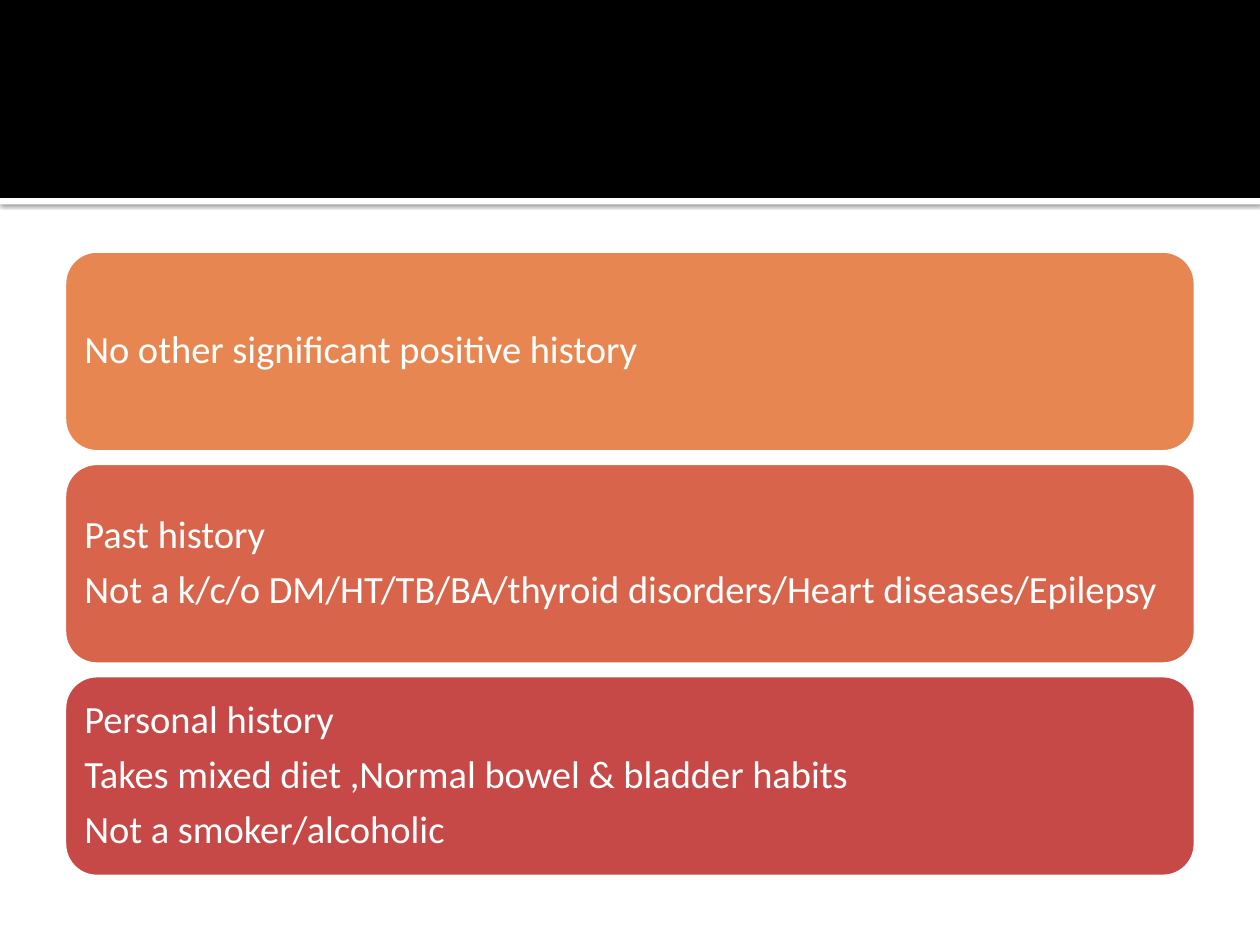
from lxml import etree
from pptx import Presentation
from pptx.dml.color import RGBColor
from pptx.enum.shapes import MSO_SHAPE
from pptx.enum.text import MSO_ANCHOR, PP_ALIGN
from pptx.oxml.ns import qn
from pptx.util import Cm, Pt

RECTANGLE = MSO_SHAPE.RECTANGLE
ROUNDED = MSO_SHAPE.ROUNDED_RECTANGLE
MIDDLE = MSO_ANCHOR.MIDDLE
LEFT = PP_ALIGN.LEFT

COLOURS = {
    "black": "000000",
    "white": "FFFFFF",
    "orange": "E88651",
    "coral": "D8644B",
    "red": "C64847",
}
PANELS = [
    ("orange", ["No other significant positive history"]),
    ("coral", [
        "Past history",
        "Not a k/c/o DM/HT/TB/BA/thyroid disorders/Heart diseases/Epilepsy",
    ]),
    ("red", [
        "Personal history",
        "Takes mixed diet ,Normal bowel & bladder habits",
        "Not a smoker/alcoholic",
    ]),
]
PAGE_WIDTH, PAGE_HEIGHT = 25.4, 19.05
HEADER_HEIGHT, STRIP_HEIGHT = 3.99, 0.13
PANEL_LEFT, PANEL_TOP, PANEL_HEIGHT, PANEL_STEP = 1.27, 5.03, 4.11, 4.28


class HistoryPage:
    """Draws the bands and text panels of a slide in one style."""

    font = "Calibri"
    size = Pt(22)
    inset = Cm(0.23)

    def __init__(self, deck):
        self.page = deck.slides.add_slide(deck.slide_layouts[6])

    def shape(self, kind, left, top, width, height, colour):
        box = self.page.shapes.add_shape(
            kind, Cm(left), Cm(top), Cm(width), Cm(height))
        box.shadow.inherit = False
        box.fill.solid()
        box.fill.fore_color.rgb = RGBColor.from_string(COLOURS[colour])
        box.line.fill.background()
        return box

    def band(self, top, height, colour):
        return self.shape(RECTANGLE, 0, top, PAGE_WIDTH, height, colour)

    def shadow(self, box):
        effects = box._element.spPr.find(qn("a:effectLst"))
        outer = etree.SubElement(
            effects, qn("a:outerShdw"), blurRad=str(Pt(2.5)),
            dist=str(Pt(0.8)), dir="5400000", algn="tl", rotWithShape="0")
        tint = etree.SubElement(outer, qn("a:srgbClr"), val=COLOURS["black"])
        etree.SubElement(tint, qn("a:alpha"), val="60000")

    def panel(self, top, colour, lines):
        width = PAGE_WIDTH - 2 * PANEL_LEFT
        box = self.shape(ROUNDED, PANEL_LEFT, top, width, PANEL_HEIGHT, colour)
        box.line.color.rgb = RGBColor.from_string(COLOURS["white"])
        box.line.width = Pt(3.78)
        frame = box.text_frame
        frame.word_wrap = True
        frame.vertical_anchor = MIDDLE
        frame.margin_left = frame.margin_right = self.inset
        frame.margin_top = frame.margin_bottom = self.inset
        for index, line in enumerate(lines):
            para = frame.add_paragraph() if index else frame.paragraphs[0]
            para.alignment = LEFT
            para.line_spacing = 0.9
            para.space_after = Pt(7.7)
            span = para.add_run()
            span.text = line
            span.font.name = self.font
            span.font.size = self.size
            span.font.color.rgb = RGBColor.from_string(COLOURS["white"])


def main():
    deck = Presentation()
    deck.slide_width, deck.slide_height = Cm(PAGE_WIDTH), Cm(PAGE_HEIGHT)
    history = HistoryPage(deck)
    strip = history.band(HEADER_HEIGHT, STRIP_HEIGHT, "white")
    history.shadow(strip)
    history.band(0, HEADER_HEIGHT, "black")
    for index, (colour, lines) in enumerate(PANELS):
        history.panel(PANEL_TOP + index * PANEL_STEP, colour, lines)
    deck.save("out.pptx")


if __name__ == "__main__":
    main()
